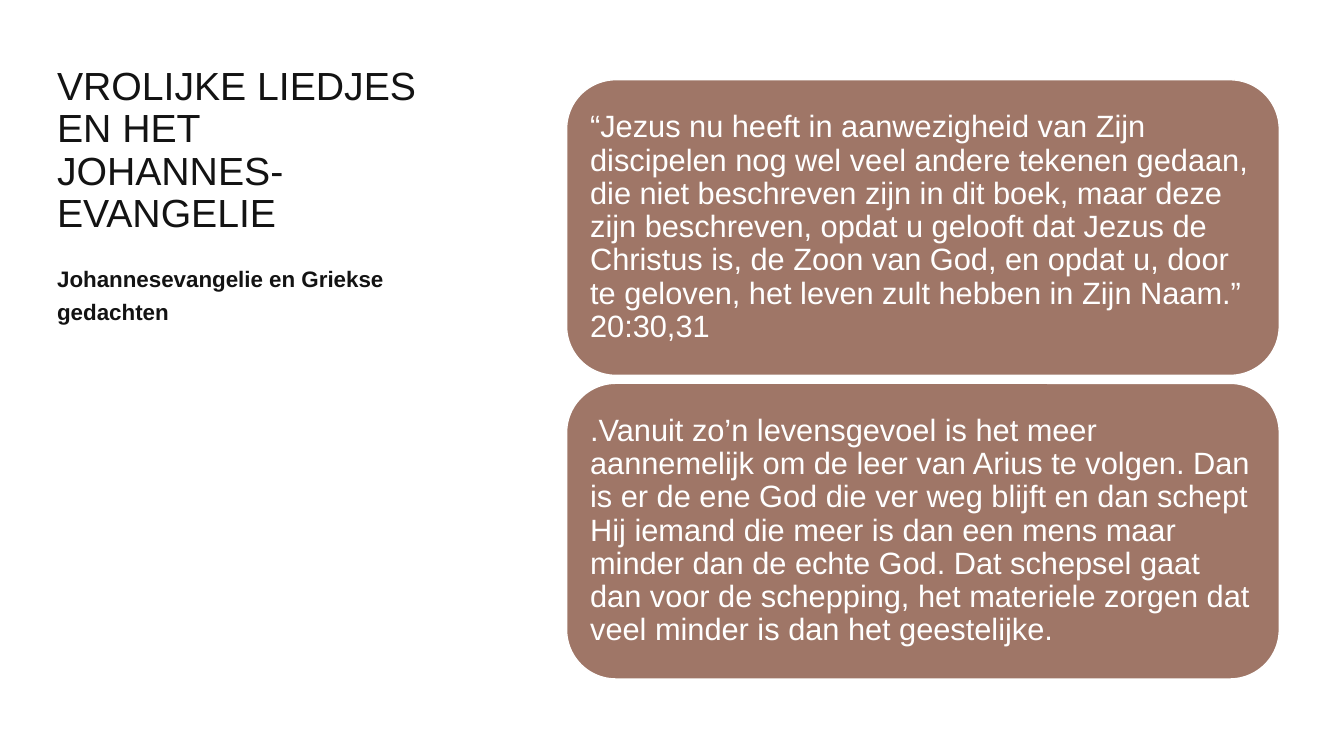
from pptx import Presentation
from pptx.dml.color import RGBColor
from pptx.enum.shapes import MSO_SHAPE as Shape
from pptx.enum.text import MSO_ANCHOR as Anchor, PP_ALIGN as Align
from pptx.util import Cm, Pt

COLORS = {"ink": "131313", "panel": "9F7667", "white": "FFFFFF"}

QUOTES = [
    "“Jezus nu heeft in aanwezigheid van Zijn discipelen nog wel veel andere "
    "tekenen gedaan, die niet beschreven zijn in dit boek, maar deze zijn "
    "beschreven, opdat u gelooft dat Jezus de Christus is, de Zoon van God, en "
    "opdat u, door te geloven, het leven zult hebben in Zijn Naam.” 20:30,31",
    ".Vanuit zo’n levensgevoel is het meer aannemelijk om de leer van Arius te "
    "volgen. Dan is er de ene God die ver weg blijft en dan schept Hij iemand "
    "die meer is dan een mens maar minder dan de echte God. Dat schepsel gaat "
    "dan voor de schepping, het materiele zorgen dat veel minder is dan het "
    "geestelijke.",
]


class SlideBuilder:
    font = "Arial"

    def __init__(self, page):
        self.page = page

    def color(self, name):
        return RGBColor.from_string(COLORS[name])

    def fill_text(self, frame, text, size, color, spacing, bold=False, before=0):
        frame.word_wrap = True
        para = frame.paragraphs[0]
        para.alignment = Align.LEFT
        para.line_spacing = spacing
        para.space_before = Pt(before)
        span = para.add_run()
        span.text = text
        span.font.name = self.font
        span.font.size = Pt(size)
        span.font.bold = bold
        span.font.color.rgb = self.color(color)

    def text(self, left, top, width, height, text, size, spacing, **style):
        box = self.page.shapes.add_textbox(
            Cm(left), Cm(top), Cm(width), Cm(height))
        self.fill_text(box.text_frame, text, size, "ink", spacing, **style)

    def panel(self, left, top, width, height, text):
        box = self.page.shapes.add_shape(
            Shape.ROUNDED_RECTANGLE, Cm(left), Cm(top), Cm(width), Cm(height))
        box.shadow.inherit = False
        box.fill.solid()
        box.fill.fore_color.rgb = self.color("panel")
        box.line.color.rgb = self.color("white")
        box.line.width = Pt(1)
        frame = box.text_frame
        frame.vertical_anchor = Anchor.MIDDLE
        frame.margin_left = frame.margin_right = Cm(0.23)
        frame.margin_top = frame.margin_bottom = Cm(0.23)
        self.fill_text(frame, text, 22, "white", 0.9)


def main():
    deck = Presentation()
    deck.slide_width, deck.slide_height = Cm(33.87), Cm(19.05)
    builder = SlideBuilder(deck.slides.add_slide(deck.slide_layouts[6]))

    # Title and subtitle
    builder.text(1.19, 1.55, 9.98, 4.88,
                 "VROLIJKE LIEDJES EN HET JOHANNES-EVANGELIE", 28, 0.9)
    builder.text(1.19, 6.43, 9.2, 11.1,
                 "Johannesevangelie en Griekse gedachten", 16, 1.2,
                 bold=True, before=10)

    # Stacked quote panels
    height, gap = 7.45, 0.2
    for row, quote in enumerate(QUOTES):
        builder.panel(14.28, 2.01 + row * (height + gap), 17.96, height, quote)

    deck.save("out.pptx")


if __name__ == "__main__":
    main()
